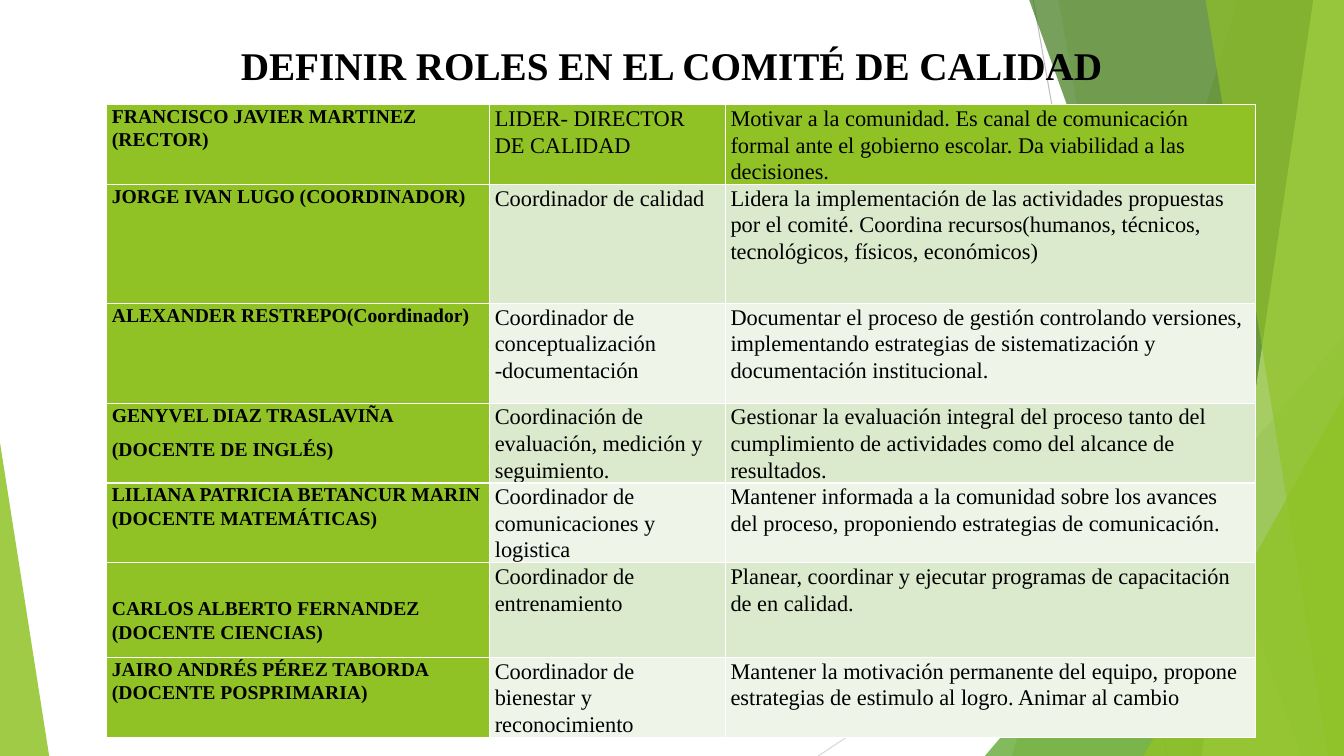
import dataclasses

import pptx
import pptx.dml.color
import pptx.enum.shapes
import pptx.enum.text
import pptx.oxml.ns
import pptx.util
from lxml import etree
from pptx.util import Cm


@dataclasses.dataclass(frozen=True)
class Theme:
    font: str = "Times New Roman"
    text: str = "000000"
    green: str = "90C226"
    leaf: str = "54A021"
    forest: str = "3F7819"
    lime: str = "C0E474"
    row_tints: tuple = ("EEF4E8", "DBE9CD")
    dark_line: str = "BFBFBF"
    light_line: str = "D9D9D9"
    title_size: int = 28
    name_size: int = 14
    role_size: int = 16


THEME = Theme()
SLIDE_WIDTH, SLIDE_HEIGHT = 33.87, 19.05
COLUMN_WIDTHS = (9.65, 5.94, 13.36)
ROW_HEIGHTS = (2.01, 3.0, 2.51, 2.01, 2.01, 2.39, 2.01)
CELL_INSET = 0.13
LOWERED_NAME, LOWERED_INSET = "CARLOS", 0.86
COMMITTEE = (
    ("FRANCISCO JAVIER MARTINEZ (RECTOR)",
     "LIDER- DIRECTOR DE CALIDAD",
     "Motivar a la comunidad. Es canal de comunicación formal ante el gobierno escolar. "
     "Da viabilidad a las decisiones."),
    ("JORGE IVAN LUGO (COORDINADOR)",
     "Coordinador de calidad",
     "Lidera la implementación de las actividades propuestas por el comité. "
     "Coordina recursos(humanos, técnicos, tecnológicos, físicos, económicos)"),
    ("ALEXANDER RESTREPO(Coordinador)",
     "Coordinador de conceptualización -documentación",
     "Documentar el proceso de gestión controlando versiones, implementando estrategias "
     "de sistematización y documentación institucional."),
    ("GENYVEL DIAZ TRASLAVIÑA\n(DOCENTE DE INGLÉS)",
     "Coordinación de evaluación, medición y seguimiento.",
     "Gestionar la evaluación integral del proceso tanto del cumplimiento de actividades "
     "como del alcance de resultados."),
    ("LILIANA PATRICIA BETANCUR MARIN (DOCENTE MATEMÁTICAS)",
     "Coordinador de comunicaciones y logistica",
     "Mantener informada a la comunidad sobre los avances del proceso, proponiendo "
     "estrategias de comunicación."),
    ("CARLOS ALBERTO FERNANDEZ (DOCENTE CIENCIAS)",
     "Coordinador de entrenamiento",
     "Planear, coordinar y ejecutar programas de capacitación de en calidad."),
    ("JAIRO ANDRÉS PÉREZ TABORDA (DOCENTE POSPRIMARIA)",
     "Coordinador de bienestar y reconocimiento",
     "Mantener la motivación permanente del equipo, propone estrategias de estimulo "
     "al logro. Animar al cambio"),
)


def color(value):
    return pptx.dml.color.RGBColor.from_string(value)


def write_text(text_frame, text, *, size, bold=False, alignment=pptx.enum.text.PP_ALIGN.LEFT,
               line_spacing=1.0, space_after=0):
    text_frame.word_wrap = True
    text_frame.text = text
    for paragraph in text_frame.paragraphs:
        paragraph.alignment = alignment
        paragraph.line_spacing = line_spacing
        paragraph.space_before = pptx.util.Pt(0)
        paragraph.space_after = pptx.util.Pt(space_after)
        for run in paragraph.runs:
            run.font.name = THEME.font
            run.font.size = pptx.util.Pt(size)
            run.font.bold = bold
            run.font.color.rgb = color(THEME.text)


def paint(shape, fill, opacity):
    shape.shadow.inherit = False
    shape.line.fill.background()
    shape.fill.solid()
    shape.fill.fore_color.rgb = color(fill)
    fill_color = next(shape._element.spPr.iter(pptx.oxml.ns.qn("a:srgbClr")))
    alpha = etree.SubElement(fill_color, pptx.oxml.ns.qn("a:alpha"))
    alpha.set("val", str(opacity * 1000))


def add_line(slide, start, end, line_color):
    connector = slide.shapes.add_connector(
        pptx.enum.shapes.MSO_CONNECTOR.STRAIGHT, *map(Cm, start + end))
    connector.line.color.rgb = color(line_color)
    connector.line.width = pptx.util.Pt(0.75)
    etree.SubElement(connector._element.spPr, pptx.oxml.ns.qn("a:effectLst"))


def add_band(slide, top_x, bottom_x, fill, opacity):
    top, right, bottom = Cm(-0.02), Cm(SLIDE_WIDTH), Cm(SLIDE_HEIGHT)
    builder = slide.shapes.build_freeform(Cm(top_x), top)
    builder.add_line_segments([(right, top), (right, bottom), (Cm(bottom_x), bottom)])
    paint(builder.convert_to_shape(), fill, opacity)


def add_triangle(slide, left, top, width, apex, fill, opacity):
    shape = slide.shapes.add_shape(
        pptx.enum.shapes.MSO_SHAPE.ISOSCELES_TRIANGLE,
        Cm(left), Cm(top), Cm(width), Cm(SLIDE_HEIGHT - top))
    shape.adjustments[0] = apex
    paint(shape, fill, opacity)


def add_background(slide):
    add_line(slide, (26.04, 0), (29.41, SLIDE_HEIGHT), THEME.dark_line)
    add_line(slide, (SLIDE_WIDTH, 10.24), (20.62, SLIDE_HEIGHT), THEME.light_line)
    add_band(slide, 31.19, 25.5, THEME.green, 30)
    add_band(slide, 26.67, 30.05, THEME.green, 20)
    add_triangle(slide, 24.82, 8.46, 9.05, 1, THEME.leaf, 72)
    add_band(slide, 25.93, 32.79, THEME.forest, 70)
    add_band(slide, 33.1, 30.28, THEME.lime, 70)
    add_band(slide, 30.38, 33.48, THEME.green, 65)
    add_triangle(slide, 28.82, 9.98, 5.05, 1, THEME.green, 80)
    add_triangle(slide, 0, 11.15, 1.24, 0, THEME.green, 85)


def add_title(slide, text):
    title = slide.shapes.title
    title.left, title.top, title.width, title.height = map(Cm, (1.83, 0.81, 30.18, 1.83))
    slide.shapes._spTree.append(title._element)
    frame = title.text_frame
    frame.auto_size = pptx.enum.text.MSO_AUTO_SIZE.NONE
    frame.vertical_anchor = pptx.enum.text.MSO_ANCHOR.TOP
    frame.margin_top = Cm(0.22)
    write_text(frame, text, size=THEME.title_size, bold=True,
               alignment=pptx.enum.text.PP_ALIGN.CENTER)


def fill_cell(cell, text, fill, is_name):
    cell.margin_left = cell.margin_right = Cm(CELL_INSET)
    cell.margin_top = Cm(LOWERED_INSET if text.startswith(LOWERED_NAME) else 0)
    cell.margin_bottom = 0
    cell.fill.solid()
    cell.fill.fore_color.rgb = color(fill)
    write_text(cell.text_frame, text, size=THEME.name_size if is_name else THEME.role_size,
               bold=is_name, line_spacing=1.07, space_after=8)


def add_committee_table(slide):
    table = slide.shapes.add_table(
        len(COMMITTEE), len(COLUMN_WIDTHS), Cm(2.69), Cm(2.64),
        Cm(sum(COLUMN_WIDTHS)), Cm(sum(ROW_HEIGHTS))).table
    table.first_col = True
    for column, width in zip(table.columns, COLUMN_WIDTHS):
        column.width = Cm(width)
    for row_index, member in enumerate(COMMITTEE):
        table.rows[row_index].height = Cm(ROW_HEIGHTS[row_index])
        for column_index, text in enumerate(member):
            is_heading = row_index == 0 or column_index == 0
            fill = THEME.green if is_heading else THEME.row_tints[row_index % 2]
            fill_cell(table.cell(row_index, column_index), text, fill, column_index == 0)


def main():
    presentation = pptx.Presentation()
    presentation.slide_width = Cm(SLIDE_WIDTH)
    presentation.slide_height = Cm(SLIDE_HEIGHT)
    slide = presentation.slides.add_slide(presentation.slide_layouts[5])
    add_background(slide)
    add_title(slide, "DEFINIR ROLES EN EL COMITÉ DE CALIDAD")
    add_committee_table(slide)
    presentation.save("out.pptx")


if __name__ == "__main__":
    main()
